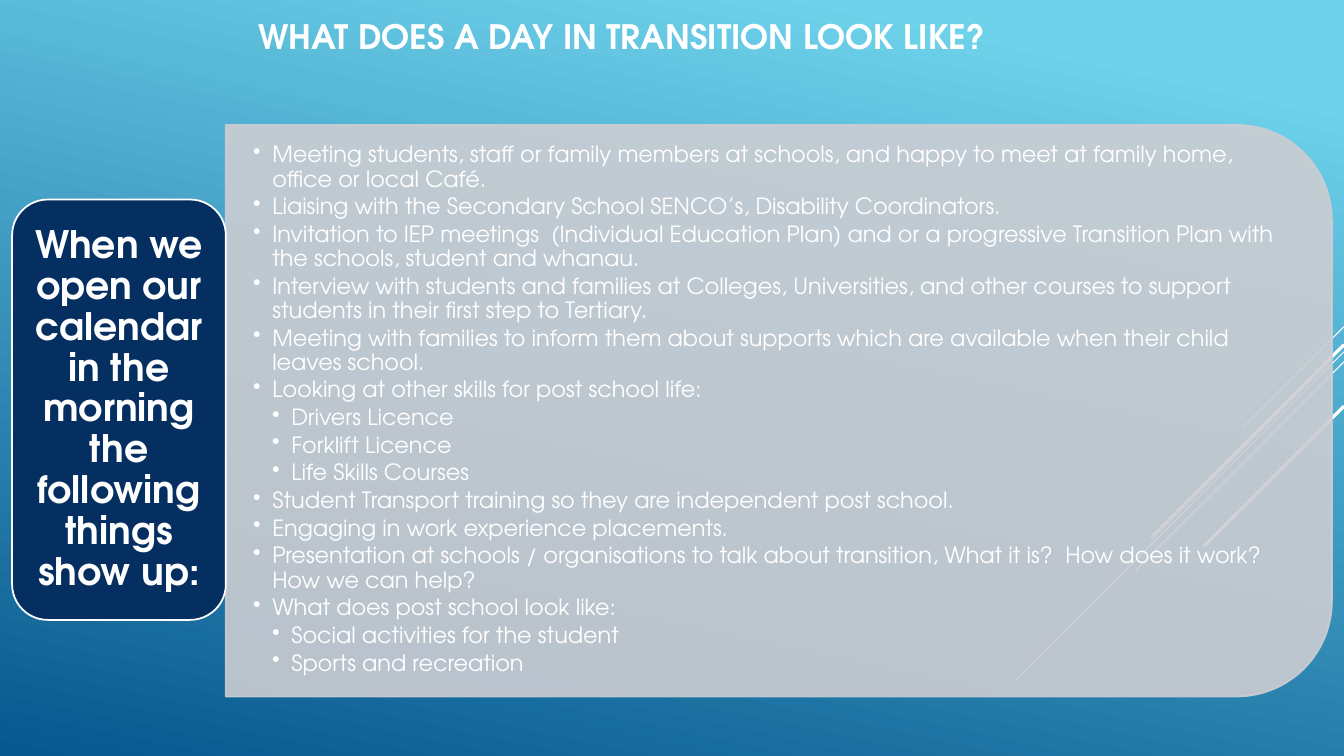
import pptx
import pptx.util
import pptx.dml.color
import pptx.enum.shapes
import pptx.enum.text
import pptx.oxml.ns
import lxml.etree

Inches = pptx.util.Inches
Pt = pptx.util.Pt
FONT = "TeX Gyre Adventor"
WHITE = "FFFFFF"
NAVY = "052F61"
GREY = "CCCDD2"

TASKS = [
    (0, "Meeting students, staff or family members at schools, and happy to meet at family home, office or local Café."),
    (0, "Liaising with the Secondary School SENCO’s, Disability Coordinators."),
    (0, "Invitation to IEP meetings  (Individual Education Plan) and or a progressive Transition Plan with the schools, student and whanau."),
    (0, "Interview with students and families at Colleges, Universities, and other courses to support students in their first step to Tertiary."),
    (0, "Meeting with families to inform them about supports which are available when their child leaves school."),
    (0, "Looking at other skills for post school life:"),
    (1, "Drivers Licence"),
    (1, "Forklift Licence"),
    (1, "Life Skills Courses"),
    (0, "Student Transport training so they are independent post school."),
    (0, "Engaging in work experience placements."),
    (0, "Presentation at schools / organisations to talk about transition, What it is?  How does it work?  How we can help?"),
    (0, "What does post school look like:"),
    (1, "Social activities for the student"),
    (1, "Sports and recreation"),
]

RAYS = [
    (3.24, 1, 0.75),
    (3.49, 3.26, 0.75),
    (3.59, 2.07, 0.75),
    (3.42, 1.91, 2.25),
    (4.03, 1.39, 2.25),
]


def rgb(code):
    return pptx.dml.color.RGBColor.from_string(code)


def add_sub(parent, tag, **attrs):
    name = pptx.oxml.ns.qn(tag)
    return lxml.etree.SubElement(parent, name, **attrs)


def fade(shape, share):
    for node in shape.element.spPr.iter(pptx.oxml.ns.qn("a:srgbClr")):
        add_sub(node, "a:alpha", val=str(share * 1000))


def set_back(slide):
    fill = slide.background.fill
    fill.gradient()
    fill.gradient_angle = 258
    for stop, (place, code) in zip(fill.gradient_stops, [(0.1, "6ED2EB"), (1, "06588E")]):
        stop.position = place
        stop.color.rgb = rgb(code)


def add_ray(slide, top, span, width):
    right = 13.33
    ray = slide.shapes.add_connector(
        pptx.enum.shapes.MSO_CONNECTOR.STRAIGHT,
        Inches(right), Inches(top), Inches(right - span), Inches(top + span))
    ray.line.color.rgb = rgb(WHITE)
    ray.line.width = Pt(width)
    add_sub(ray.element.spPr, "a:effectLst")


def add_panel(slide, kind, box, fill, line):
    panel = slide.shapes.add_shape(kind, *map(Inches, box))
    panel.shadow.inherit = False
    panel.fill.solid()
    panel.fill.fore_color.rgb = rgb(fill)
    panel.line.color.rgb = rgb(line)
    panel.line.width = Pt(1.25)
    return panel


def set_frame(shape, inset, anchor):
    frame = shape.text_frame
    frame.word_wrap = True
    frame.auto_size = pptx.enum.text.MSO_AUTO_SIZE.NONE
    frame.vertical_anchor = anchor
    frame.margin_left = frame.margin_right = Inches(inset[0])
    frame.margin_top = frame.margin_bottom = Inches(inset[1])
    return frame


def write(para, text, size, bold=False, align="LEFT", space=1, after=0):
    para.alignment = getattr(pptx.enum.text.PP_ALIGN, align)
    para.line_spacing = space
    para.space_after = Pt(after)
    run = para.add_run()
    run.text = text
    run.font.name = FONT
    run.font.size = Pt(size)
    run.font.bold = bold
    run.font.color.rgb = rgb(WHITE)


def add_dot(para, level):
    para.level = level
    props = para._p.get_or_add_pPr()
    props.set("marL", str(Inches(0.19 * (level + 1))))
    props.set("indent", str(Inches(-0.19)))
    add_sub(props, "a:buChar", char="•")


def add_list(slide, box, items):
    shape = slide.shapes.add_textbox(*map(Inches, box))
    frame = set_frame(shape, (0.27, 0.14), pptx.enum.text.MSO_ANCHOR.MIDDLE)
    for i, (level, text) in enumerate(items):
        para = frame.add_paragraph() if i else frame.paragraphs[0]
        write(para, text, size=16, space=0.9, after=2.5)
        add_dot(para, level)


def set_title(slide, box, text):
    title = slide.shapes.title
    title.left, title.top, title.width, title.height = map(Inches, box)
    frame = set_frame(title, (0.1, 0.05), pptx.enum.text.MSO_ANCHOR.TOP)
    write(frame.paragraphs[0], text, size=24, bold=True)


def main():
    deck = pptx.Presentation()
    deck.slide_width = Inches(13.33)
    deck.slide_height = Inches(7.5)
    slide = deck.slides.add_slide(deck.slide_layouts[5])
    kinds = pptx.enum.shapes.MSO_SHAPE

    set_back(slide)
    set_title(slide, (2.46, 0.11, 8.81, 0.5), "WHAT DOES A DAY IN TRANSITION LOOK LIKE?")
    for ray in RAYS:
        add_ray(slide, *ray)

    panel = add_panel(slide, kinds.ROUND_2_SAME_RECTANGLE, (4.89, -1.41, 5.67, 10.97), GREY, GREY)
    panel.rotation = 90
    fade(panel, 90)
    add_list(slide, (2.24, 1.51, 10.69, 5.11), TASKS)

    card = add_panel(slide, kinds.ROUNDED_RECTANGLE, (0.12, 1.98, 2.12, 4.17), NAVY, WHITE)
    frame = set_frame(card, (0.11, 0.06), pptx.enum.text.MSO_ANCHOR.MIDDLE)
    write(frame.paragraphs[0],
          "When we open our calendar in the morning the following things show up:",
          size=27, bold=True, align="CENTER", space=0.9)

    deck.save("out.pptx")


if __name__ == "__main__":
    main()
